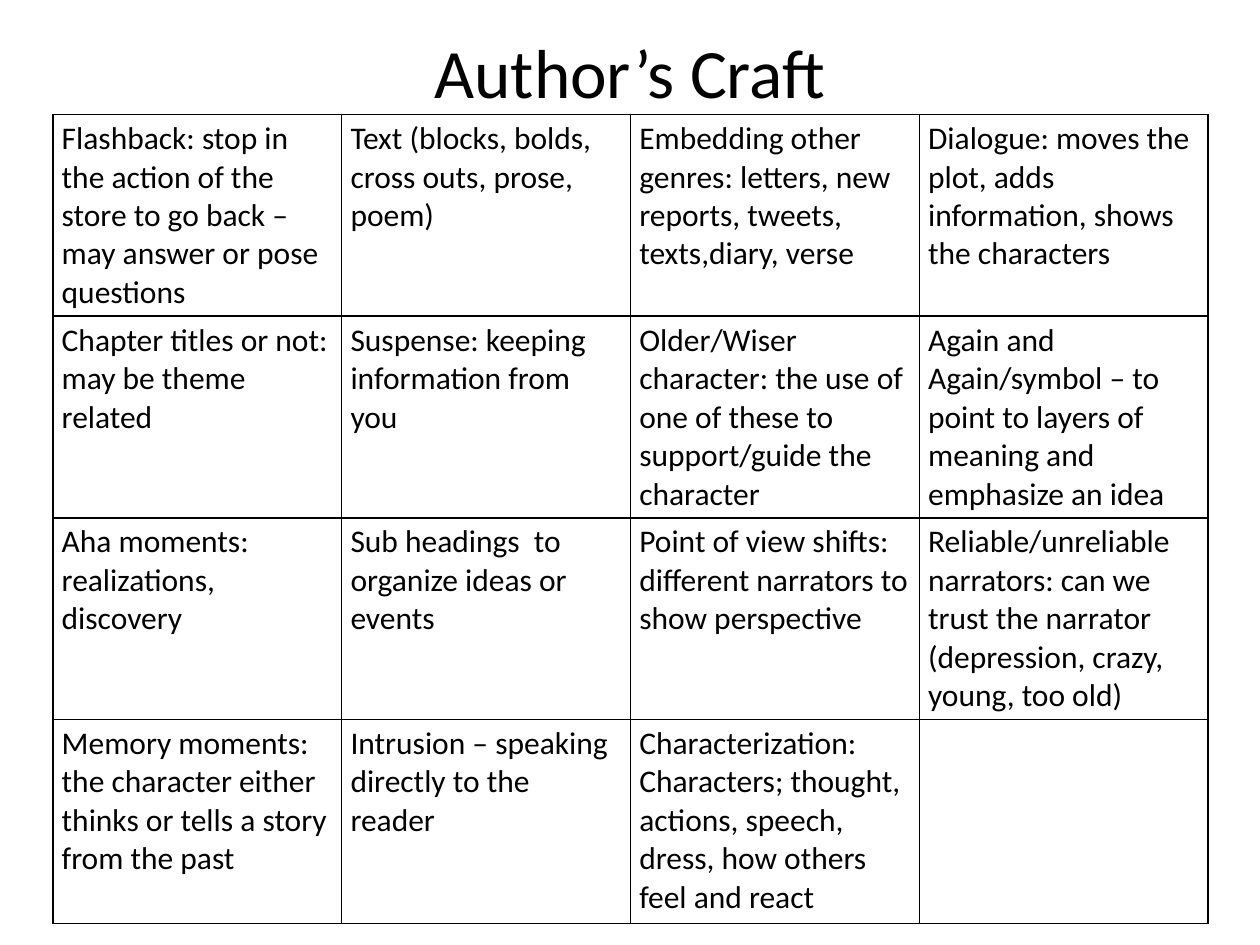
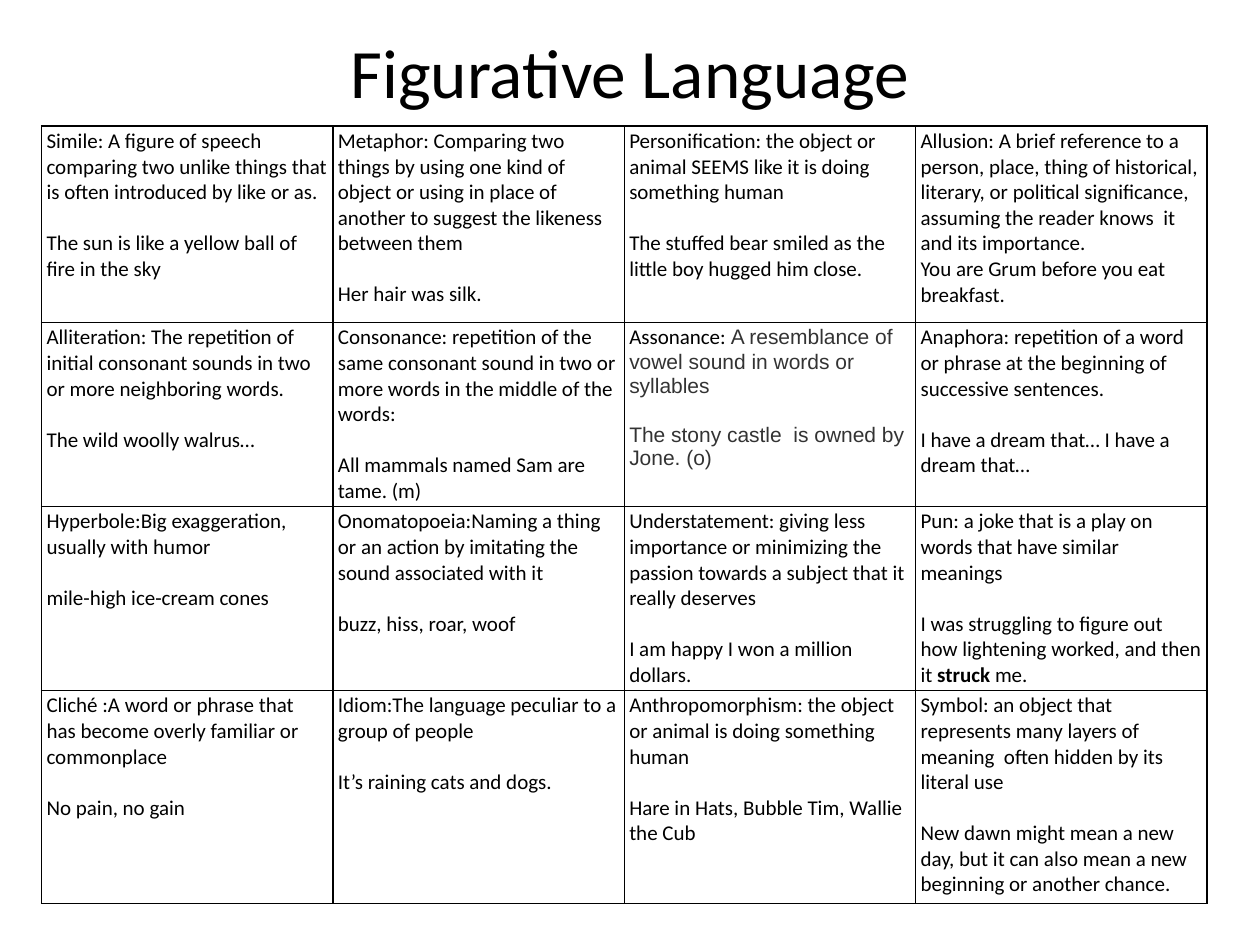
from dataclasses import dataclass, field

from lxml.etree import SubElement
from pptx import Presentation
from pptx.dml.color import RGBColor
from pptx.enum.text import MSO_ANCHOR, PP_ALIGN
from pptx.oxml.ns import qn
from pptx.util import Inches, Pt


@dataclass(frozen=True)
class Theme:
    """Colours, fonts and type sizes."""
    paper: str = "FFFFFF"
    ink: str = "000000"
    rule: int = 1
    gap: float = 14.6
    fonts: dict = field(default_factory=lambda: {
        "title": {"name": "Calibri", "size": 39.6, "color": "000000"},
        "large": {"name": "Calibri", "size": 18, "color": "000000"},
        "small": {"name": "Calibri", "size": 12, "color": "000000"},
        "bold": {"name": "Calibri", "size": 12, "color": "000000", "bold": True},
        "quote": {"name": "Arial", "size": 12, "color": "333333"},
    })


@dataclass
class Term:
    """A definition and its example; each is a text or a list of runs."""
    lead: object
    sample: object = None
    gap: bool = True


class Deck:
    """Holds the theme and the current slide."""

    def __init__(self, theme):
        self.theme = theme
        self.deck = Presentation()
        self.deck.slide_width, self.deck.slide_height = Inches(10), Inches(7.5)
        self.slide = None

    def page(self, title):
        self.slide = self.deck.slides.add_slide(self.deck.slide_layouts[6])
        self.title(title)

    def title(self, text):
        box = self.slide.shapes.add_textbox(
            Inches(0.5), Inches(0.3), Inches(9), Inches(0.53))
        frame = box.text_frame
        form = {"word_wrap": True, "vertical_anchor": MSO_ANCHOR.MIDDLE,
                "margin_top": 0, "margin_bottom": 0}
        for name, value in form.items():
            setattr(frame, name, value)
        para = frame.paragraphs[0]
        para.alignment = PP_ALIGN.CENTER
        self.runs(para, text, "title")

    def runs(self, para, text, style):
        """Write a text, or a list of texts and (text, style) pairs."""
        for part in [text] if isinstance(text, str) else text:
            words, look = (part, style) if isinstance(part, str) else part
            run = para.add_run()
            run.text = words
            form = dict(self.theme.fonts[look])
            run.font.color.rgb = RGBColor.from_string(form.pop("color"))
            form["size"] = Pt(form["size"])
            for name, value in form.items():
                setattr(run.font, name, value)

    def border(self, cell):
        props = cell._tc.get_or_add_tcPr()
        for spot, side in enumerate(("lnL", "lnR", "lnT", "lnB")):
            line = props.makeelement(qn("a:" + side), {"w": str(Pt(self.theme.rule))})
            fill = SubElement(line, qn("a:solidFill"))
            SubElement(fill, qn("a:srgbClr"), val=self.theme.ink)
            props.insert(spot, line)

    def cell(self, cell, term, style, pad):
        left, right, edge = (Inches(size) for size in pad)
        form = {"margin_left": left, "margin_right": right,
                "margin_top": edge, "margin_bottom": edge}
        for name, value in form.items():
            setattr(cell, name, value)
        cell.fill.solid()
        cell.fill.fore_color.rgb = RGBColor.from_string(self.theme.paper)
        self.border(cell)
        if term is None:
            return
        frame = cell.text_frame
        self.runs(frame.paragraphs[0], term.lead, style)
        if term.sample:
            para = frame.add_paragraph()
            para.space_before = Pt(self.theme.gap if term.gap else 0)
            self.runs(para, term.sample, style)

    def table(self, terms, spot, width, rows, style, pad, cols=4):
        left, top = (Inches(size) for size in spot)
        grid = self.slide.shapes.add_table(
            len(rows), cols, left, top, Inches(width), Inches(sum(rows))).table
        grid.first_row = grid.horz_banding = False
        for col in grid.columns:
            col.width = Inches(width / cols)
        for row, height in zip(grid.rows, rows):
            row.height = Inches(height)
        for cell, term in zip(grid.iter_cells(), terms):
            self.cell(cell, term, style, pad)

    def save(self):
        self.deck.save("out.pptx")


# Terms, row by row
CRAFT = [
    Term("Flashback: stop in the action of the store to go back – may answer or pose questions"),
    Term("Text (blocks, bolds, cross outs, prose, poem)"),
    Term("Embedding other genres: letters, new reports, tweets, texts,diary, verse"),
    Term("Dialogue: moves the plot, adds information, shows the characters"),
    Term("Chapter titles or not: may be theme related"),
    Term("Suspense: keeping information from you"),
    Term("Older/Wiser character: the use of one of these to support/guide the character"),
    Term("Again and Again/symbol – to point to layers of meaning and emphasize an idea"),
    Term("Aha moments: realizations, discovery"),
    Term("Sub headings  to organize ideas or events"),
    Term("Point of view shifts: different narrators to show perspective"),
    Term("Reliable/unreliable narrators: can we trust the narrator "
         "(depression, crazy, young, too old)"),
    Term("Memory moments: the character either thinks or tells a story from the past"),
    Term("Intrusion – speaking directly to the reader"),
    Term("Characterization:",
         "Characters; thought, actions, speech, dress, how others feel and react", gap=False),
    None,
]

FIGURES = [
    Term("Simile: A figure of speech comparing two unlike things that is often "
         "introduced by like or as.",
         "The sun is like a yellow ball of fire in the sky"),
    Term("Metaphor: Comparing two things by using one kind of object or using in "
         "place of another to suggest the likeness between them",
         "Her hair was silk."),
    Term("Personification: the object or animal SEEMS like it is doing something human",
         "The stuffed bear smiled as the little boy hugged him close."),
    Term("Allusion: A brief reference to a person, place, thing of historical, literary, "
         "or political significance, assuming the reader knows  it and its importance.",
         "You are Grum before you eat breakfast.", gap=False),
    Term("Alliteration: The repetition of  initial consonant sounds in two or more "
         "neighboring words.",
         "The wild woolly walrus…"),
    Term("Consonance: repetition of the same consonant sound in two or more words in "
         "the middle of the words:",
         "All mammals named Sam are tame. (m)"),
    Term(["Assonance: ", ("A resemblance of vowel sound in words or syllables", "quote")],
         [("The stony castle  is owned by Jone. (o)", "quote")]),
    Term("Anaphora: repetition of a word or phrase at the beginning of successive sentences.",
         "I have a dream that… I have a dream that…"),
    Term("Hyperbole:Big exaggeration, usually with humor",
         "mile-high ice-cream cones"),
    Term("Onomatopoeia:Naming a thing or an action by imitating the sound associated with it",
         "buzz, hiss, roar, woof"),
    Term("Understatement: giving less importance or minimizing the passion towards a "
         "subject that it really deserves",
         "I am happy I won a million dollars."),
    Term("Pun: a joke that is a play on words that have similar meanings",
         ["I was struggling to figure out how lightening worked, and then it ",
          ("struck ", "bold"), "me."]),
    Term("Cliché :A word or phrase that has become overly familiar or commonplace",
         "No pain, no gain"),
    Term("Idiom:The language peculiar to a group of people",
         "It’s raining cats and dogs."),
    Term("Anthropomorphism: the object or animal is doing something human",
         "Hare in Hats, Bubble Tim, Wallie the Cub"),
    Term("Symbol: an object that represents many layers of meaning  often hidden by "
         "its literal use",
         "New dawn might mean a new day, but it can also mean a new beginning or "
         "another chance."),
]


def main():
    deck = Deck(Theme())

    # Author's craft
    deck.page("Author’s Craft")
    deck.table(CRAFT, (0.42, 0.91), 9.17, [1.6, 1.6, 1.6, 1.62], "large", (0.07, 0.08, 0.04))

    # Figurative language
    deck.page("Figurative Language")
    deck.table(FIGURES, (0.33, 1), 9.25, [1.56, 1.46, 1.46, 1.69], "small", (0.04, 0.04, 0.02))

    deck.save()


if __name__ == "__main__":
    main()
